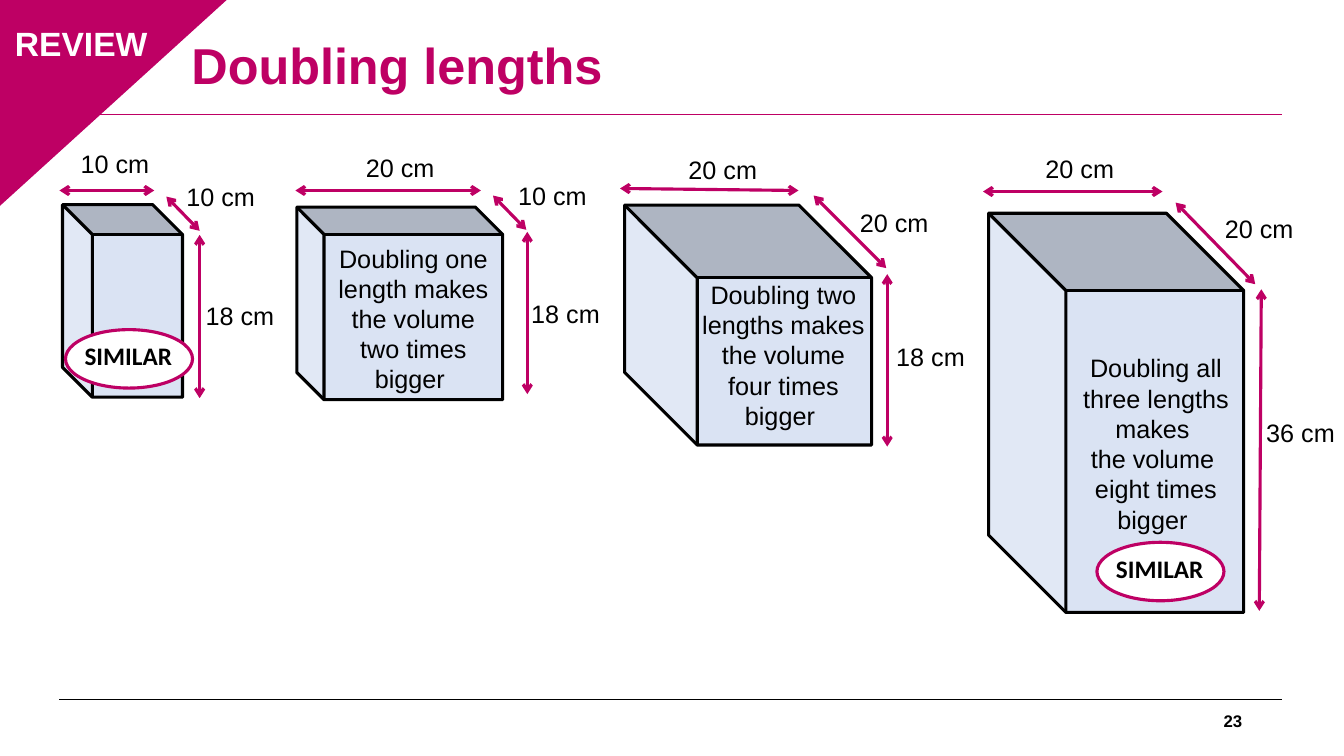
import pptx
import pptx.dml.color
import pptx.enum.shapes
import pptx.enum.text
import pptx.oxml
import pptx.oxml.ns
import pptx.util

MAGENTA = pptx.dml.color.RGBColor(0xBE, 0x00, 0x64)
PALE_BLUE = pptx.dml.color.RGBColor(0xDA, 0xE3, 0xF3)
BLACK = pptx.dml.color.RGBColor(0x00, 0x00, 0x00)
WHITE = pptx.dml.color.RGBColor(0xFF, 0xFF, 0xFF)
SHAPES = pptx.enum.shapes.MSO_SHAPE
ALIGN = pptx.enum.text.PP_ALIGN
ANCHOR = pptx.enum.text.MSO_ANCHOR

deck = pptx.Presentation()
deck.slide_width = pptx.util.Inches(13.33)
deck.slide_height = pptx.util.Inches(7.5)
slide = deck.slides.add_slide(deck.slide_layouts[6])

# All lengths below are columns and rows of this grid.
COL = deck.slide_width / 133.3
ROW = deck.slide_height / 75


def text(words, left, top, width, height, size=18, font="Arial", color=BLACK,
         bold=False, align=ALIGN.LEFT, anchor=ANCHOR.TOP, wrap=True, spacing=1.0):
    box = slide.shapes.add_textbox(int(left * COL), int(top * ROW),
                                   int(width * COL), int(height * ROW))
    frame = box.text_frame
    frame.word_wrap = wrap
    frame.vertical_anchor = anchor
    for index, line in enumerate(words.split("\n")):
        paragraph = frame.paragraphs[0] if index == 0 else frame.add_paragraph()
        paragraph.alignment = align
        paragraph.line_spacing = spacing
        run = paragraph.add_run()
        run.text = line
        run.font.size = pptx.util.Pt(size)
        run.font.name = font
        run.font.bold = bold
        run.font.color.rgb = color


def line(x1, y1, x2, y2, color=MAGENTA, weight=2.25, arrows=True):
    connector = slide.shapes.add_connector(
        pptx.enum.shapes.MSO_CONNECTOR.STRAIGHT,
        int(x1 * COL), int(y1 * ROW), int(x2 * COL), int(y2 * ROW))
    connector.line.color.rgb = color
    connector.line.width = pptx.util.Pt(weight)
    if arrows:
        outline = connector.line._get_or_add_ln()
        for end in ("a:headEnd", "a:tailEnd"):
            tip = pptx.oxml.parse_xml(f'<{end} {pptx.oxml.ns.nsdecls("a")} type="arrow"/>')
            outline.append(tip)
    connector._element.spPr.append(
        pptx.oxml.parse_xml(f'<a:effectLst {pptx.oxml.ns.nsdecls("a")}/>'))


# Page frame
for rule_y, rule_color in ((69.4, BLACK), (11.4, MAGENTA)):
    line(5.9, rule_y, 127.2, rule_y, color=rule_color, weight=0.75, arrows=False)
text("23", 94.2, 69.5, 30, 4, size=12, bold=True, align=ALIGN.RIGHT, anchor=ANCHOR.MIDDLE)
text("Doubling lengths", 18, 1.2, 86.9, 11.1, size=36, color=MAGENTA, bold=True,
     anchor=ANCHOR.MIDDLE, spacing=0.9)

corner = slide.shapes.add_shape(SHAPES.ISOSCELES_TRIANGLE, int(-0.3 * COL), int(-0.2 * ROW),
                                int(22.9 * COL), int(20.8 * ROW))
corner.adjustments[0] = 0
corner._element.spPr.xfrm.set("flipV", "1")
corner.shadow.inherit = False
corner.fill.solid()
corner.fill.fore_color.rgb = MAGENTA
corner.line.color.rgb = MAGENTA
corner.line.width = pptx.util.Pt(1)
text("REVIEW", -0.2, 1.8, 16.5, 5, size=24, color=WHITE, bold=True, align=ALIGN.CENTER)

# Prisms: centre, visible width and height, depth ratio, then for width, depth
# and height: the measure, the label's corner and the arrow's two ends
prisms = [
    (12.15, 29.85, 11.9, 19.1, 0.249, [
        ("10 cm", (7, 14.2), (5.9, 18.9, 15.3, 18.9)),
        ("10 cm", (17.5, 17.5), (19.8, 22.9, 16.5, 19.5)),
        ("18 cm", (19.4, 29.3), (19.8, 23.3, 19.8, 39.5))]),
    (39.65, 30.1, 20.4, 19.1, 0.141, [
        ("20 cm", (35.3, 14.6), (29.3, 18.9, 47.7, 18.9)),
        ("10 cm", (50.4, 17.4), (52.2, 22.8, 48.9, 19.4)),
        ("18 cm", (51.7, 29.1), (52.3, 23, 52.3, 39.1))]),
    (74.2, 32.25, 24.5, 23.8, 0.303, [
        ("20 cm", (67.3, 14.8), (61.5, 18.7, 79.2, 18.9)),
        ("20 cm", (84.3, 20.1), (87.9, 26.6, 80.7, 19.4)),
        ("18 cm", (87.9, 33.4), (88, 27.2, 88, 44.3))]),
    (110.7, 40.95, 25.3, 39.6, 0.303, [
        ("20 cm", (102.7, 14.7), (97.5, 19, 115.3, 19)),
        ("20 cm", (120.5, 20.7), (124.5, 28.2, 116.6, 20.1)),
        ("36 cm", (124.6, 40.9), (125.1, 28.7, 124.9, 60.6))]),
]
for center_x, center_y, width, height, depth_ratio, measures in prisms:
    # A quarter turn swaps the frame's width and height.
    prism = slide.shapes.add_shape(
        SHAPES.CUBE, int((center_x - height / 2) * COL), int((center_y - width / 2) * ROW),
        int(height * COL), int(width * ROW))
    prism.rotation = 270
    prism.adjustments[0] = depth_ratio
    prism.shadow.inherit = False
    prism.fill.solid()
    prism.fill.fore_color.rgb = PALE_BLUE
    prism.line.color.rgb = BLACK
    prism.line.width = pptx.util.Pt(2.25)
    for measure, (label_x, label_y), arrow_ends in measures:
        line(*arrow_ends)
        text(measure, label_x, label_y, 8.9, 4, wrap=False)

explanations = [
    ("Doubling one\nlength makes\nthe volume\ntwo times bigger ", 31.7, 23.6, 18.6, 16.2),
    ("Doubling two\nlengths makes\nthe volume\nfour times bigger ", 68.6, 27.2, 18.2, 16.2),
    ("Doubling all three lengths makes \nthe volume \neight times bigger ",
     104, 34.5, 21.3, 19.2),
]
for explanation, *place in explanations:
    text(explanation, *place, align=ALIGN.CENTER)

for badge_x, badge_y in ((6.5, 32.7), (108.8, 53.8)):
    badge = slide.shapes.add_shape(SHAPES.OVAL, int(badge_x * COL), int(badge_y * ROW),
                                   int(12.6 * COL), int(5.8 * ROW))
    badge.shadow.inherit = False
    badge.fill.solid()
    badge.fill.fore_color.rgb = WHITE
    badge.line.color.rgb = MAGENTA
    badge.line.width = pptx.util.Pt(2.25)
    text("SIMILAR", badge_x + 0.9, badge_y + 0.6, 11, 4, font="Calibri", bold=True)

deck.save("out.pptx")
